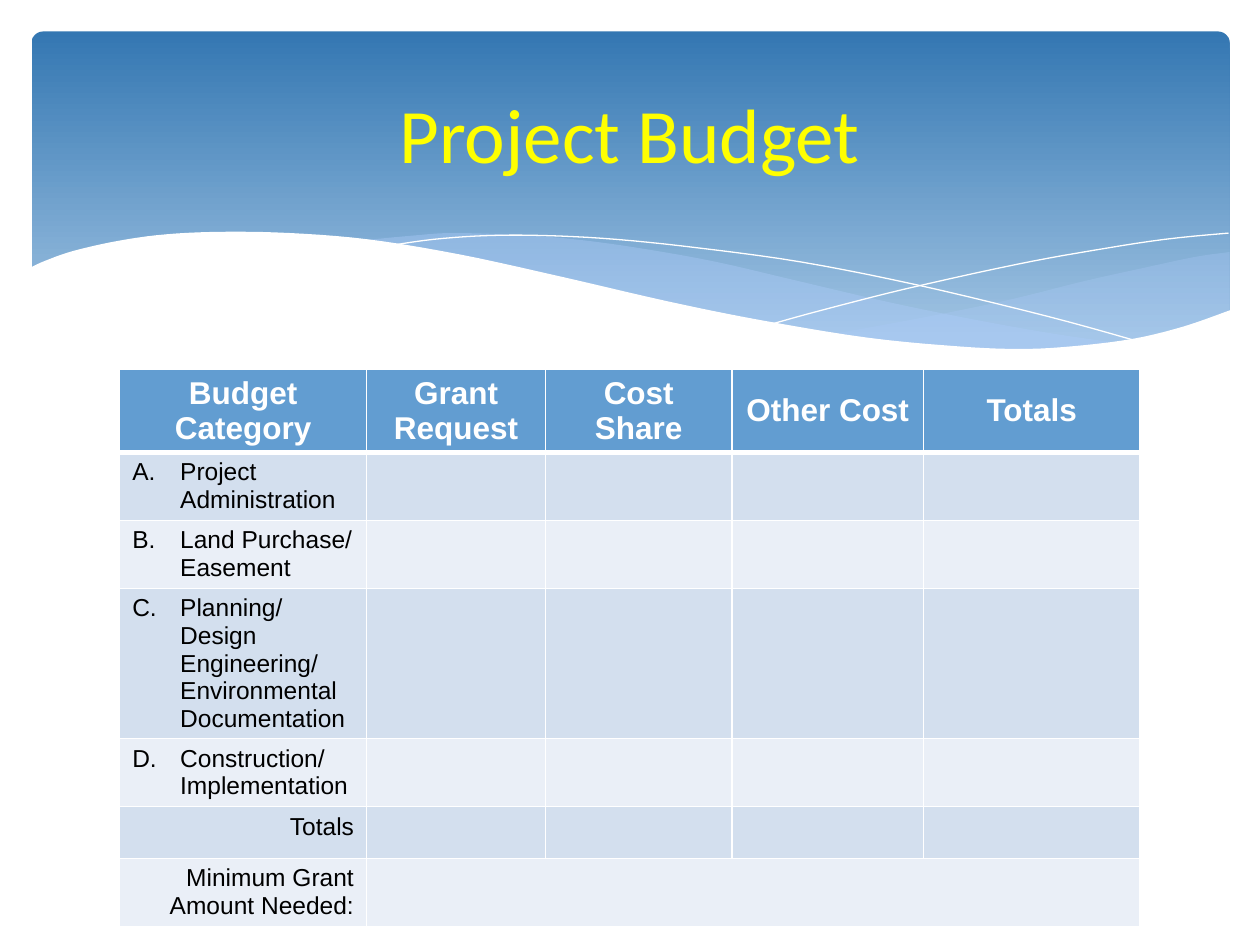
from dataclasses import dataclass
from itertools import chain

from lxml import etree
from pptx import Presentation
from pptx.dml.color import RGBColor
from pptx.enum.shapes import MSO_SHAPE
from pptx.enum.text import MSO_ANCHOR, PP_ALIGN
from pptx.oxml.ns import qn
from pptx.util import Inches, Pt

ROUNDED = MSO_SHAPE.ROUNDED_RECTANGLE
LEFT, CENTER, RIGHT = PP_ALIGN.LEFT, PP_ALIGN.CENTER, PP_ALIGN.RIGHT
TOP, MIDDLE = MSO_ANCHOR.TOP, MSO_ANCHOR.MIDDLE


@dataclass(frozen=True)
class Theme:
    white: str = "FFFFFF"
    black: str = "000000"
    title: str = "FFFF00"
    sky: tuple = ("3477B2", "A1C4E3")
    wave: str = "ACCBF9"
    header: str = "629DD1"
    bands: tuple = ("D3DFEE", "EAEFF7")
    title_font: str = "Calibri"
    body_font: str = "Arial"
    title_size: int = 44
    header_size: int = 18
    body_size: int = 14


THEME = Theme()
WIDTH, HEIGHT = 10, 7.5
INDENT = 0.38

TITLE = "Project Budget"
HEADERS = ["Budget Category", "Grant Request", "Cost Share", "Other Cost", "Totals"]
CATEGORIES = [
    "Project Administration",
    "Land Purchase/ Easement",
    "Planning/Design Engineering/ Environmental Documentation",
    "Construction/ Implementation",
]
SUMMARIES = ["Totals", "Minimum Grant Amount Needed:"]
COLUMNS = [1.96, 1.42, 1.48, 1.52, 1.72]
ROWS = [0.65, 0.54, 0.54, 1.19, 0.54, 0.41, 0.54]

WAVES = [
    dict(fill=THEME.wave, alpha=29, curves=[
        [(9.76, 2), (9.48, 2.04), (9.06, 2.13), (8.61, 2.23), (8.05, 2.37),
         (7.53, 2.48), (7.06, 2.57), (6.61, 2.65)],
        [(6.61, 2.65), (7.05, 2.71), (7.57, 2.76), (8.14, 2.78), (8.63, 2.75),
         (9.05, 2.69), (9.42, 2.59), (9.76, 2.47)],
    ]),
    dict(fill=THEME.wave, alpha=40, curves=[
        [(8.93, 2.73), (8.37, 2.65), (7.75, 2.54), (7.06, 2.4), (6.29, 2.22),
         (5.69, 2.08), (5.14, 1.98), (4.65, 1.91), (4.2, 1.87), (3.61, 1.85),
         (3.28, 1.87), (2.86, 1.91)],
        [(2.86, 1.91), (3.42, 1.99), (4.04, 2.11), (4.49, 2.22), (5.3, 2.4),
         (6.01, 2.55), (6.65, 2.66), (7.22, 2.74), (7.73, 2.77), (8.18, 2.78),
         (8.57, 2.77), (8.93, 2.73)],
    ]),
    dict(line=THEME.white, curves=[
        [(3.09, 1.95), (3.44, 1.9), (3.87, 1.87), (4.33, 1.87), (4.89, 1.9),
         (5.56, 1.97), (6.36, 2.08), (7.27, 2.26), (8.31, 2.51), (9.07, 2.72)],
    ]),
    dict(line=THEME.white, curves=[
        [(6.13, 2.57), (6.53, 2.46), (7.2, 2.29), (8.06, 2.1), (8.66, 1.99),
         (9.24, 1.9), (9.75, 1.85)],
    ]),
    dict(fill=THEME.white, curves=[
        [(9.77, 2.46), (9.4, 2.59), (8.99, 2.69), (8.5, 2.75), (8.09, 2.77),
         (7.61, 2.75), (6.88, 2.68), (6.03, 2.54), (5.29, 2.39), (4.47, 2.2),
         (3.65, 2.02), (2.92, 1.9), (2.3, 1.85), (1.77, 1.84), (1.32, 1.86),
         (0.95, 1.91), (0.59, 1.99), (0.36, 2.07), (0.23, 2.13)],
        [(0.23, 3.29), (9.77, 3.29)],
    ]),
]


def color(value):
    return RGBColor.from_string(value)


def smooth(points, steps=5):
    if len(points) < 3:
        return points
    padded = [points[0], *points, points[-1]]
    curve = [points[0]]
    for a, b, c, d in zip(padded, padded[1:], padded[2:], padded[3:]):
        for step in range(1, steps + 1):
            t = step / steps
            curve.append(tuple(
                q + t * ((r - p) + t * ((2 * p - 5 * q + 4 * r - s)
                                        + t * (3 * q - p - 3 * r + s))) / 2
                for p, q, r, s in zip(a, b, c, d)))
    return curve


def write(frame, text, size=THEME.body_size, font=THEME.body_font,
          tint=THEME.black, bold=False, align=LEFT, number=None):
    para = frame.paragraphs[0]
    para.alignment = align
    span = para.add_run()
    span.text = text
    span.font.size, span.font.name, span.font.bold = Pt(size), font, bold
    span.font.color.rgb = color(tint)
    if number:
        properties = para._p.get_or_add_pPr()
        properties.set("marL", str(Inches(INDENT)))
        properties.set("indent", str(Inches(-INDENT)))
        etree.SubElement(properties, qn("a:buFont"), typeface="+mj-lt")
        etree.SubElement(properties, qn("a:buAutoNum"),
                         type="alphaUcPeriod", startAt=str(number))


def draw_wave(page, curves, fill=None, line=None, alpha=100):
    outline = chain.from_iterable(smooth(curve) for curve in curves)
    points = [(Inches(x), Inches(y)) for x, y in outline]
    builder = page.shapes.build_freeform(*points[0])
    builder.add_line_segments(points[1:], close=fill is not None)
    wave = builder.convert_to_shape()
    wave.shadow.inherit = False
    if fill:
        wave.fill.solid()
        wave.fill.fore_color.rgb = color(fill)
        wave.line.fill.background()
        tint = wave.element.xpath("./p:spPr/a:solidFill/a:srgbClr")[0]
        etree.SubElement(tint, qn("a:alpha"), val=str(alpha * 1000))
    else:
        wave.fill.background()
        wave.line.color.rgb = color(line)
        wave.line.width = 0


def draw_banner(page):
    sky = page.shapes.add_shape(ROUNDED, Inches(0.25), Inches(0.25),
                                Inches(9.51), Inches(2.7))
    sky.adjustments[0] = 0.034
    sky.shadow.inherit = False
    sky.line.fill.background()
    sky.fill.gradient()
    sky.fill.gradient_angle = 270
    for stop, tint, place in zip(sky.fill.gradient_stops, THEME.sky, (0, 0.9)):
        stop.color.rgb, stop.position = color(tint), place
    for wave in WAVES:
        draw_wave(page, **wave)


def style_cell(cell, fill, bottom=1):
    properties = cell._tc.get_or_add_tcPr()
    for side, width in dict(lnL=1, lnR=1, lnT=1, lnB=bottom).items():
        border = etree.SubElement(properties, qn(f"a:{side}"), w=str(Pt(width)))
        solid = etree.SubElement(border, qn("a:solidFill"))
        etree.SubElement(solid, qn("a:srgbClr"), val=THEME.white)
    cell.fill.solid()
    cell.fill.fore_color.rgb = color(fill)


def draw_budget(page):
    budget = page.shapes.add_table(len(ROWS), len(COLUMNS), Inches(0.95), Inches(2.93),
                                   Inches(sum(COLUMNS)), Inches(sum(ROWS))).table
    for column, width in zip(budget.columns, COLUMNS):
        column.width = Inches(width)
    for index, (row, height) in enumerate(zip(budget.rows, ROWS)):
        row.height = Inches(height)
        for cell in row.cells:
            if index:
                style_cell(cell, THEME.bands[(index - 1) % 2])
            else:
                style_cell(cell, THEME.header, bottom=3)
            cell.vertical_anchor = TOP if index else MIDDLE
    for index, text in enumerate(HEADERS):
        write(budget.cell(0, index).text_frame, text, size=THEME.header_size,
              tint=THEME.white, bold=True, align=CENTER)
    for number, text in enumerate(CATEGORIES, 1):
        write(budget.cell(number, 0).text_frame, text, number=number)
    for index, text in enumerate(SUMMARIES, len(CATEGORIES) + 1):
        write(budget.cell(index, 0).text_frame, text, align=RIGHT)
    last = len(ROWS) - 1
    budget.cell(last, 1).merge(budget.cell(last, len(COLUMNS) - 1))


def draw_title(page):
    title = page.shapes.title
    title.left, title.top = Inches(0.5), Inches(0.37)
    title.width, title.height = Inches(9), Inches(1.37)
    title.text_frame.vertical_anchor = MIDDLE
    write(title.text_frame, TITLE, size=THEME.title_size, font=THEME.title_font,
          tint=THEME.title, align=CENTER)
    title.element.getparent().append(title.element)


def main():
    deck = Presentation()
    deck.slide_width, deck.slide_height = Inches(WIDTH), Inches(HEIGHT)
    page = deck.slides.add_slide(deck.slide_layouts.get_by_name("Title Only"))
    draw_banner(page)
    draw_budget(page)
    draw_title(page)
    deck.save("out.pptx")


if __name__ == "__main__":
    main()
